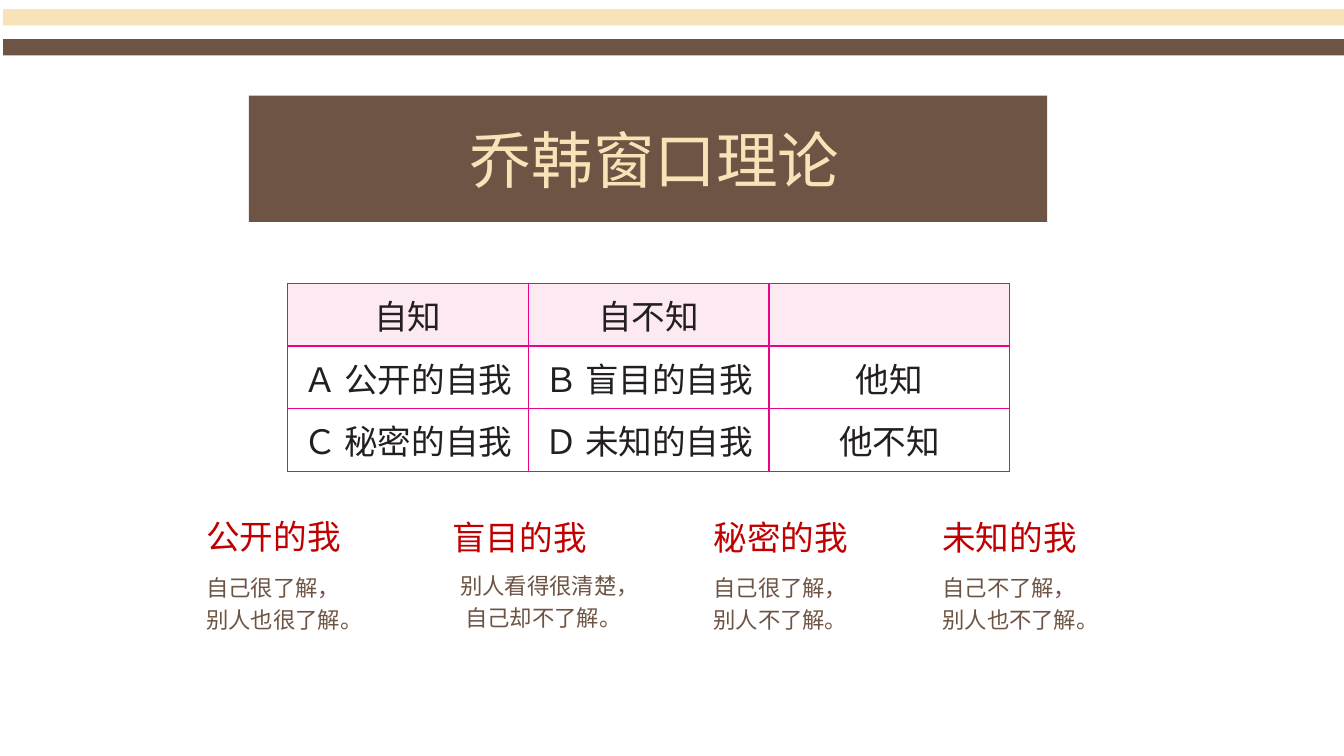
from lxml import etree
from pptx import Presentation
from pptx.dml.color import RGBColor
from pptx.enum.shapes import MSO_SHAPE
from pptx.enum.text import MSO_ANCHOR, MSO_AUTO_SIZE, PP_ALIGN
from pptx.oxml.ns import qn
from pptx.util import Cm, Pt

RECTANGLE = MSO_SHAPE.RECTANGLE
MIDDLE = MSO_ANCHOR.MIDDLE
NO_AUTOFIT = MSO_AUTO_SIZE.NONE
LEFT, CENTER, JUSTIFY = PP_ALIGN.LEFT, PP_ALIGN.CENTER, PP_ALIGN.JUSTIFY

FONT = "Noto Sans CJK SC"
COLORS = {
    "brown": "6E5444",
    "cream": "F8E2B7",
    "pink": "FDE9F1",
    "magenta": "EC008C",
    "ink": "231F20",
    "red": "C00000",
}


def write(frame, text, size, color, alignment):
    frame.text = text
    paragraph = frame.paragraphs[0]
    paragraph.alignment = alignment
    paragraph.font.size = Pt(size)
    paragraph.font.color.rgb = RGBColor.from_string(COLORS[color])
    paragraph.font.name = FONT
    properties = paragraph._p.pPr.find(qn("a:defRPr"))
    etree.SubElement(properties, qn("a:ea"), typeface=FONT)
    return paragraph


def add_border(cell, side):
    line = etree.SubElement(cell._tc.get_or_add_tcPr(), qn(f"a:{side}"), w=str(Pt(1)))
    fill = etree.SubElement(line, qn("a:solidFill"))
    etree.SubElement(fill, qn("a:srgbClr"), val=COLORS["magenta"])


presentation = Presentation()
presentation.slide_width = Cm(33.87)
presentation.slide_height = Cm(19.05)
slide = presentation.slides.add_slide(presentation.slide_layouts[5])

# Title on a brown panel
title = slide.shapes.title
title.left, title.top, title.width, title.height = Cm(6.27), Cm(2.41), Cm(20.12), Cm(3.18)
title.fill.solid()
title.fill.fore_color.rgb = RGBColor.from_string(COLORS["brown"])
title.text_frame.auto_size = NO_AUTOFIT
title.text_frame.vertical_anchor = MIDDLE
write(title.text_frame, " 乔韩窗口理论", 44, "cream", CENTER)

# Stripes along the top edge
for top, color in ((0.99, "brown"), (0.23, "cream")):
    stripe = slide.shapes.add_shape(RECTANGLE, Cm(0.08), Cm(top), Cm(33.83), Cm(0.41))
    stripe.shadow.inherit = False
    stripe.fill.solid()
    stripe.fill.fore_color.rgb = RGBColor.from_string(COLORS[color])
    stripe.line.fill.background()

# Window table
window_rows = [
    ["自知", "自不知", ""],
    ["Ａ 公开的自我", "Ｂ 盲目的自我", "他知"],
    ["Ｃ 秘密的自我", "Ｄ 未知的自我", "他不知"],
]
table = slide.shapes.add_table(3, 3, Cm(7.24), Cm(7.14), Cm(18.21), Cm(4.75)).table
table.first_row = False
table.horz_banding = False
for column in table.columns:
    column.width = Cm(6.07)
for row_index, (row, texts) in enumerate(zip(table.rows, window_rows)):
    row.height = Cm(1.58)
    for cell, text in zip(row.cells, texts):
        cell.margin_left = cell.margin_right = cell.margin_top = cell.margin_bottom = 0
        cell.vertical_anchor = MIDDLE
        write(cell.text_frame, text, 24, "ink", CENTER)
        for side in ("lnL", "lnR", "lnT", "lnB"):
            add_border(cell, side)
        if row_index == 0:
            cell.fill.solid()
            cell.fill.fore_color.rgb = RGBColor.from_string(COLORS["pink"])
        else:
            cell.fill.background()

# Four selves: heading with its position, description with its position and width
selves = [
    ("公开的我", 4.95, 12.88, "自己很了解， 别人也很了解。", 4.95, 14.2, 4.19),
    ("盲目的我", 11.15, 12.9, "别人看得很清楚， 自己却不了解。", 11.35, 14.15, 4.8),
    ("秘密的我", 17.73, 12.9, "自己很了解， 别人不了解。", 17.73, 14.2, 4.19),
    ("未知的我", 23.5, 12.9, "自己不了解， 别人也不了解。", 23.5, 14.2, 4.19),
]
for heading, heading_left, heading_top, description, left, top, width in selves:
    description_box = slide.shapes.add_textbox(Cm(left), Cm(top), Cm(width), Cm(4.29))
    description_box.text_frame.word_wrap = True
    paragraph = write(description_box.text_frame, description, 16, "brown", LEFT)
    paragraph.line_spacing = 1.2

    heading_box = slide.shapes.add_textbox(Cm(heading_left), Cm(heading_top), Cm(4.19), Cm(1.27))
    heading_box.text_frame.word_wrap = True
    write(heading_box.text_frame, heading, 24, "red", JUSTIFY)

presentation.save("out.pptx")
